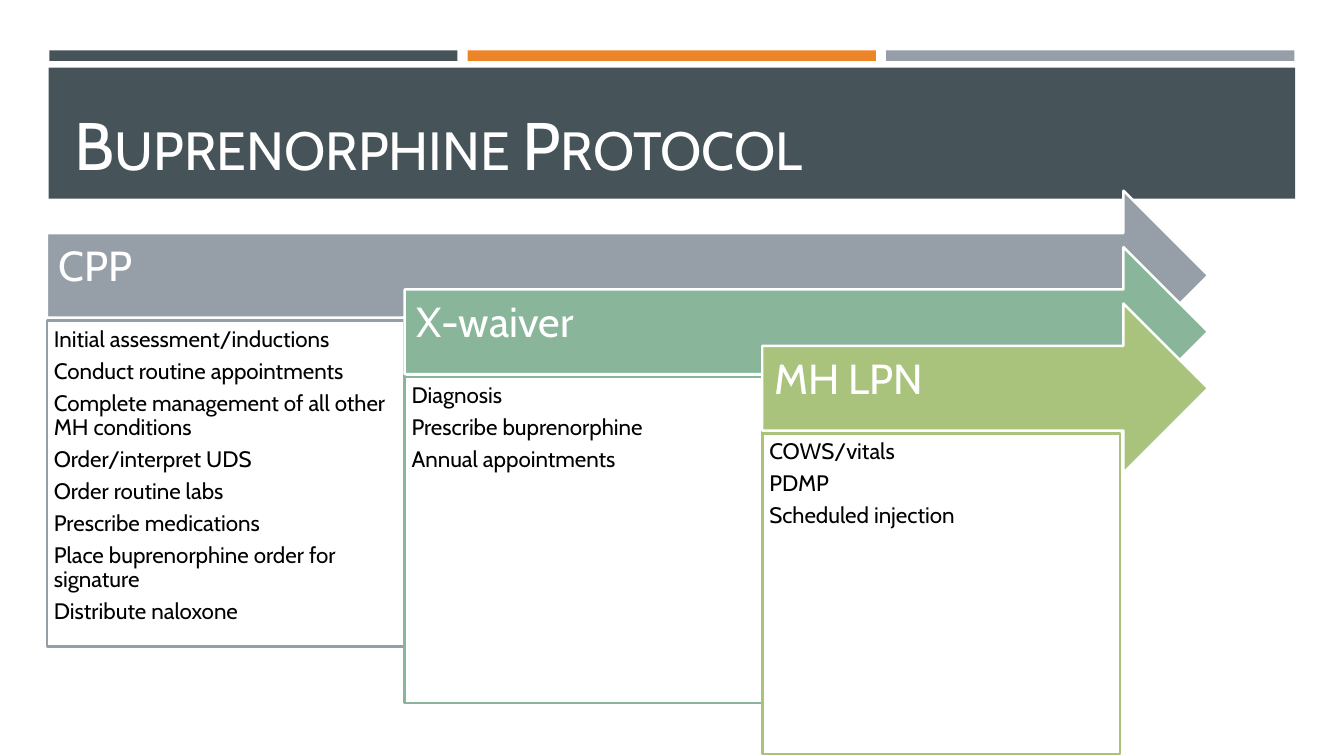
from dataclasses import dataclass

from pptx import Presentation
from pptx.dml.color import RGBColor
from pptx.enum.shapes import MSO_SHAPE as Shape
from pptx.enum.text import MSO_ANCHOR as Anchor, MSO_AUTO_SIZE as AutoSize, PP_ALIGN as Align
from pptx.util import Pt

# Content: each role with its colour name and tasks
TITLE = "Buprenorphine Protocol"
ROLES = [
    ("CPP", "gray", [
        "Initial assessment/inductions",
        "Conduct routine appointments",
        "Complete management of all other MH conditions",
        "Order/interpret UDS",
        "Order routine labs",
        "Prescribe medications",
        "Place buprenorphine order for signature",
        "Distribute naloxone",
    ]),
    ("X-waiver", "green", [
        "Diagnosis",
        "Prescribe buprenorphine",
        "Annual appointments",
    ]),
    ("MH LPN", "lime", [
        "COWS/vitals",
        "PDMP",
        "Scheduled injection",
    ]),
]
STRIPES = ["slate", "orange", "gray"]


@dataclass(frozen=True)
class Theme:
    font: str = "Cabin"
    slate: str = "465359"
    orange: str = "ED8428"
    gray: str = "969FA7"
    green: str = "89B59B"
    lime: str = "A9C37C"
    white: str = "FFFFFF"
    black: str = "000000"
    title_size: float = 48
    role_size: float = 30
    task_size: float = 16
    outline: float = 1.75


theme = Theme()

# Layout in points
SLIDE_W, SLIDE_H = 960, 540
STRIPE_X, STRIPE_Y, STRIPE_W, STRIPE_H, STRIPE_STEP = 35.2, 36, 291.6, 7.5, 298.9
BANNER = (34.8, 48.4, 890.4, 93.6)
TITLE_BOX = (46.1, 55.9, 868.3, 79.9)
FLOW_X, FLOW_Y, FLOW_RIGHT = 33.5, 136.2, 863
STEP_X, STEP_Y = 255.5, 40.3
ARROW_H, TASKS_DROP, TASKS_H = 121, 92.9, 232.6
TASKS_BOTTOM = 538.6
ROLE_INSETS = (8.6, 8.6, 20.2, 19.4)
TASK_INSETS = (5, 5, 5, 5)


def color(name):
    return RGBColor.from_string(getattr(theme, name))


def add_block(kind, box, fill, outline=None):
    block = slide.shapes.add_shape(kind, *map(Pt, box))
    block.shadow.inherit = False
    block.fill.solid()
    block.fill.fore_color.rgb = color(fill)
    if outline:
        block.line.color.rgb = color(outline)
        block.line.width = Pt(theme.outline)
    else:
        block.line.fill.background()
    return block


def write(shape, lines, *, size, ink, anchor, insets=(7.2, 3.6, 7.2, 3.6),
          spacing=0.9, after=0, small_caps=False):
    frame = shape.text_frame
    frame.word_wrap = True
    frame.auto_size = AutoSize.NONE
    frame.vertical_anchor = anchor
    (frame.margin_left, frame.margin_top,
     frame.margin_right, frame.margin_bottom) = map(Pt, insets)
    for i, line in enumerate(lines):
        paragraph = frame.add_paragraph() if i else frame.paragraphs[0]
        paragraph.alignment = Align.LEFT
        paragraph.line_spacing = spacing
        paragraph.space_after = Pt(after)
        run = paragraph.add_run()
        run.text = line
        run.font.name = theme.font
        run.font.size = Pt(size)
        run.font.color.rgb = color(ink)
        if small_caps:
            run.font._element.set("cap", "small")


prs = Presentation()
prs.slide_width, prs.slide_height = Pt(SLIDE_W), Pt(SLIDE_H)
slide = prs.slides.add_slide(prs.slide_layouts[5])

# Stripes and banner
for i, stripe in enumerate(STRIPES):
    add_block(Shape.RECTANGLE,
              (STRIPE_X + i * STRIPE_STEP, STRIPE_Y, STRIPE_W, STRIPE_H), stripe)
add_block(Shape.RECTANGLE, BANNER, "slate")

# Title, brought in front of the banner
title = slide.shapes.title
title.left, title.top, title.width, title.height = map(Pt, TITLE_BOX)
write(title, [TITLE], size=theme.title_size, ink="white", anchor=Anchor.BOTTOM,
      small_caps=True)
title.element.getparent().append(title.element)

# Stepped arrows, each with its task box
for i, (role, tint, tasks) in enumerate(ROLES):
    x, y = FLOW_X + i * STEP_X, FLOW_Y + i * STEP_Y
    arrow = add_block(Shape.RIGHT_ARROW, (x, y, FLOW_RIGHT - x, ARROW_H), tint, "white")
    write(arrow, [role], size=theme.role_size, ink="white", anchor=Anchor.MIDDLE,
          insets=ROLE_INSETS)
    tasks_y = y + TASKS_DROP
    tasks_h = min(TASKS_H, TASKS_BOTTOM - tasks_y)
    task_box = add_block(Shape.RECTANGLE, (x, tasks_y, STEP_X, tasks_h), "white", tint)
    write(task_box, tasks, size=theme.task_size, ink="black", anchor=Anchor.TOP,
          insets=TASK_INSETS, after=5.6)

prs.save("out.pptx")
